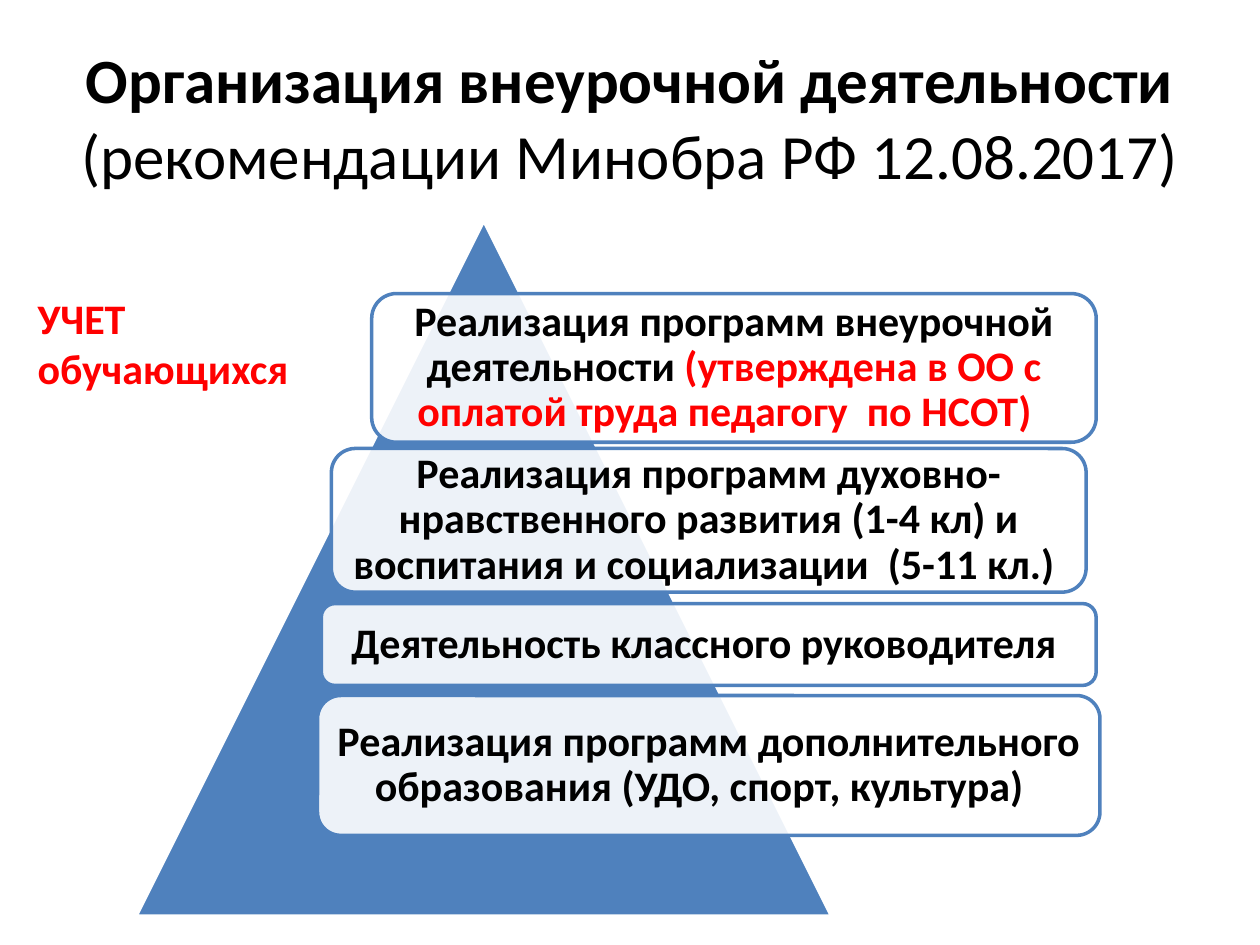
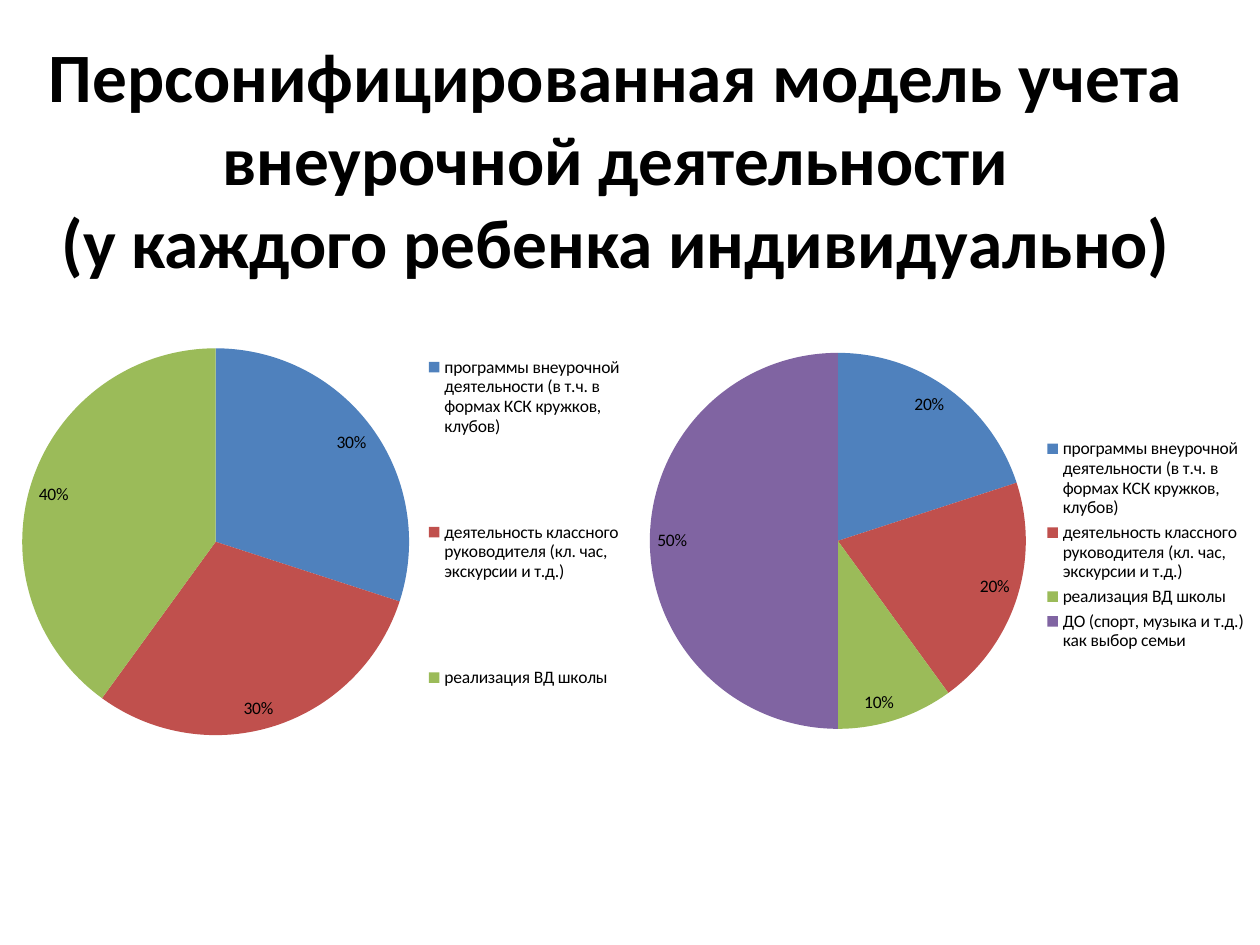
from lxml import etree
from pptx import Presentation
from pptx import util as u
from pptx.chart.data import CategoryChartData
from pptx.dml.color import RGBColor
from pptx.enum import chart as charts, shapes, text
from pptx.oxml.ns import qn

COLORS = {
    "ink": "000000", "paper": "FFFFFF", "alert": "FF0000",
    "blue": "4F81BD", "red": "C0504D", "green": "9BBB59", "violet": "8064A2",
}
SLICE_COLORS = ("blue", "red", "green", "violet")
FONT = "Calibri"
COLUMNS, ROWS = 100, 75


def color(name):
    return RGBColor.from_string(COLORS[name])


class Deck:
    """Holds the shared style and the current slide; places are in grid columns and rows."""

    def __init__(self):
        self.presentation = Presentation()
        self.presentation.slide_width = u.Inches(10)
        self.presentation.slide_height = u.Inches(7.5)
        self.slide = None

    def new_slide(self):
        self.slide = self.presentation.slides.add_slide(self.presentation.slide_layouts[6])

    def place(self, left, top, width, height):
        column = self.presentation.slide_width / COLUMNS
        row = self.presentation.slide_height / ROWS
        return [u.Emu(round(n * unit)) for n, unit in
                zip((left, top, width, height), (column, row, column, row))]

    def add_words(self, shape, runs, size, align=text.PP_ALIGN.CENTER,
                  anchor=text.MSO_ANCHOR.MIDDLE):
        """Each run is (words, colour name, bold); None stands for a line break."""
        frame = shape.text_frame
        frame.word_wrap = True
        frame.vertical_anchor = anchor
        paragraph = frame.paragraphs[0]
        paragraph.alignment = align
        for item in runs:
            if item is None:
                paragraph.add_line_break()
                continue
            words, ink, bold = item
            run = paragraph.add_run()
            run.text = words
            run.font.name, run.font.size, run.font.bold = FONT, u.Pt(size), bold
            run.font.color.rgb = color(ink)
        return paragraph

    def text_box(self, box, runs, size, **options):
        shape = self.slide.shapes.add_textbox(*self.place(*box))
        self.add_words(shape, runs, size, **options)

    def shape(self, kind, box, fill, line):
        shape = self.slide.shapes.add_shape(kind, *self.place(*box))
        shape.shadow.inherit = False
        shape.fill.solid()
        shape.fill.fore_color.rgb = color(fill)
        shape.line.color.rgb = color(line)
        shape.line.width = u.Pt(2)
        return shape

    def card(self, box, runs):
        card = self.shape(shapes.MSO_SHAPE.ROUNDED_RECTANGLE, box, "paper", "blue")
        fill = card.fill._xPr.find(qn("a:solidFill"))
        etree.SubElement(fill[0], qn("a:alpha"), val="90000")
        frame = card.text_frame
        frame.margin_left = frame.margin_right = u.Inches(0.09)
        frame.margin_top = frame.margin_bottom = u.Inches(0.09)
        self.add_words(card, runs, 24).line_spacing = 0.9

    def pie(self, box, slices, plot_area, legend_area=None):
        data = CategoryChartData(number_format="0%")
        data.categories = [name for name, _ in slices]
        data.add_series("Series 1", [share for _, share in slices])
        chart = self.slide.shapes.add_chart(
            charts.XL_CHART_TYPE.PIE, *self.place(*box), data).chart
        chart.has_title = False
        chart.font.name, chart.font.size = FONT, u.Pt(10)
        chart.font.color.rgb = color("ink")
        chart.has_legend = True
        chart.legend.position = charts.XL_LEGEND_POSITION.RIGHT
        chart.legend.include_in_layout = False

        plot = chart.plots[0]
        plot.vary_by_categories = True
        plot.has_data_labels = True
        labels = plot.data_labels
        labels.show_value, labels.show_percentage = True, False
        labels.number_format, labels.number_format_is_linked = "0%", False
        labels.position = charts.XL_LABEL_POSITION.INSIDE_END
        for index, name in zip(range(len(slices)), SLICE_COLORS):
            fill = plot.series[0].points[index].format.fill
            fill.solid()
            fill.fore_color.rgb = color(name)

        chart_xml = chart._chartSpace.chart
        self.set_layout(chart_xml.find(qn("c:plotArea")), 0, plot_area, inner=True)
        if legend_area:
            self.set_layout(chart_xml.find(qn("c:legend")), 1, legend_area)

    @staticmethod
    def set_layout(parent, position, area, inner=False):
        """Fix a chart part at shares (x, y, w, h) of the chart's frame."""
        for old in parent.findall(qn("c:layout")):
            parent.remove(old)
        layout = etree.Element(qn("c:layout"))
        manual = etree.SubElement(layout, qn("c:manualLayout"))
        if inner:
            etree.SubElement(manual, qn("c:layoutTarget"), val="inner")
        for mode in ("xMode", "yMode"):
            etree.SubElement(manual, qn("c:" + mode), val="edge")
        for side, share in zip("xywh", area):
            etree.SubElement(manual, qn("c:" + side), val=str(share))
        parent.insert(position, layout)


def pyramid_slide(deck):
    deck.new_slide()
    # Title
    deck.text_box((5, 3, 90, 12.5), [
        ("Организация внеурочной деятельности ", "ink", True),
        ("(рекомендации Минобра РФ 12.08.2017) ", "ink", False)], 36)

    # Pyramid with its four levels
    deck.shape(shapes.MSO_SHAPE.ISOSCELES_TRIANGLE, (10.8, 17.5, 55.2, 55.2), "blue", "paper")
    levels = [
        ((29.5, 23.3, 57.5, 11.8), [
            ("Реализация программ внеурочной деятельности ", "ink", True),
            ("(утверждена в ОО с оплатой труда педагогу  по НСОТ)  ", "alert", True)]),
        ((26.3, 35.6, 59.9, 11.4), [
            ("Реализация программ духовно-нравственного развития (1-4 кл) "
             "и воспитания и социализации  (5-11 кл.) ", "ink", True)]),
        ((25.5, 47.9, 61.5, 6.5), [
            ("Деятельность классного руководителя ", "ink", True)]),
        ((25.2, 55.2, 62.1, 11.1), [
            ("Реализация программ дополнительного образования "
             "(УДО, спорт, культура)  ", "ink", True)]),
    ]
    for box, runs in levels:
        deck.card(box, runs)

    # Side note
    deck.text_box((2, 22.7, 22.8, 9.1), [("УЧЕТ обучающихся", "alert", True)], 24,
                  align=text.PP_ALIGN.LEFT, anchor=text.MSO_ANCHOR.TOP)


def model_slide(deck):
    deck.new_slide()
    # Title
    deck.text_box((2.3, 3.9, 93.1, 17.2), [
        ("Персонифицированная модель учета внеурочной деятельности", "ink", True),
        None,
        ("(у каждого ребенка индивидуально)", "ink", True)], 39.6)

    # Activity shares without and with the family's choice
    activities = ["программы внеурочной деятельности (в т.ч. в формах КСК кружков, клубов)",
                  "деятельность классного руководителя (кл. час, экскурсии и т.д.)",
                  "реализация ВД школы ",
                  "ДО (спорт, музыка и т.д.) как выбор семьи "]
    deck.pie((0.2, 12.3, 50.5, 61.4), list(zip(activities, (0.3, 0.3, 0.4))),
             plot_area=(0.03, 0.25, 0.61, 0.5), legend_area=(0.65, 0.15, 0.34, 0.65))
    deck.pie((50, 11.5, 50, 63.5), list(zip(activities, (0.2, 0.2, 0.1, 0.5))),
             plot_area=(0.03, 0.26, 0.6, 0.47))


def main():
    deck = Deck()
    pyramid_slide(deck)
    model_slide(deck)
    deck.presentation.save("out.pptx")


if __name__ == "__main__":
    main()
